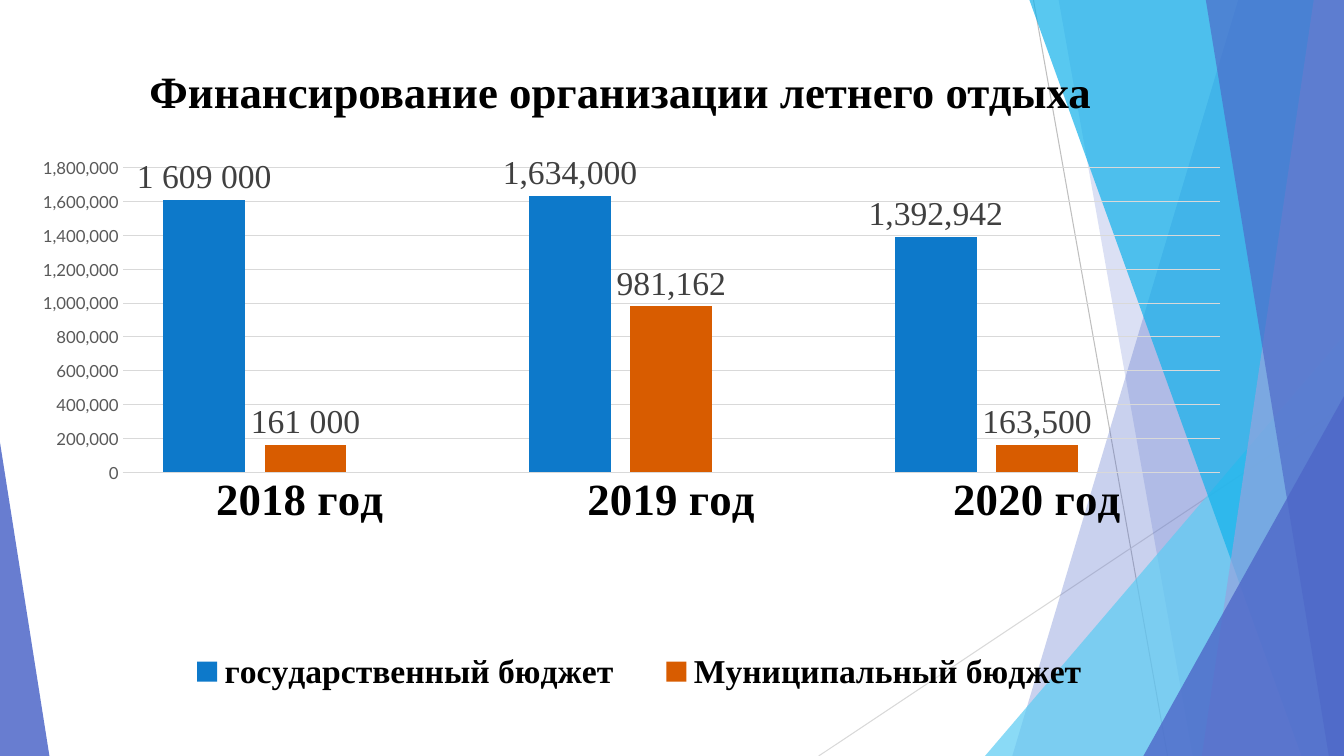
from dataclasses import dataclass
from typing import Optional

from lxml import etree
from pptx import Presentation
from pptx import util as u
from pptx.chart.data import CategoryChartData
from pptx.dml.color import RGBColor
from pptx.enum import chart as ch, shapes as sh, text as tx
from pptx.oxml import parse_xml
from pptx.oxml.ns import nsdecls, qn

HEX = {
    "black": "000000", "dark": "404040", "gray": "595959",
    "line": "BFBFBF", "grid": "D9D9D9",
    "indigo": "4E67C8", "aqua": "5ECCF3", "cyan": "12B2EB", "lilac": "95A4DE",
    "state": "0D79CA", "city": "D85C00",
}
SERIF, SANS = "Times New Roman", "Lato"
WIDE, HIGH = 13.33, 7.5


@dataclass
class Ray:
    start: tuple[float, float]
    end: tuple[float, float]
    hue: str


@dataclass
class Band:
    """A panel running to the right edge, given by its left corners."""
    top: float
    foot: float
    hue: str
    alpha: int
    right: float = WIDE


@dataclass
class Wedge:
    left: float
    top: float
    width: float
    apex: float
    hue: str
    alpha: int


@dataclass
class Budget:
    name: str
    sums: tuple[Optional[int], ...]
    hue: str = ""
    first: str = ""


RAYS = [
    Ray((10.25, 0), (11.58, HIGH), "line"),
    Ray((WIDE, 4.03), (8.12, HIGH), "grid"),
]
PANELS = [
    Band(12.28, 10.04, "indigo", 30),
    Band(10.5, 11.83, "indigo", 20),
    Wedge(9.77, 3.33, 3.56, 1, "aqua", 72),
    Band(10.21, 12.91, "cyan", 70),
    Band(13.03, 11.92, "lilac", 70),
    Band(11.96, 13.18, "indigo", 65),
    Wedge(11.34, 3.93, 1.99, 1, "indigo", 80),
    Wedge(0, 4.39, 0.49, 0, "indigo", 85),
]
YEARS = ["2018 год ", "2019 год", "2020 год"]
FUNDS = [
    Budget("государственный бюджет", (1609000, 1634000, 1392942), "state", "1 609 000"),
    Budget("Муниципальный бюджет", (161000, 981162, 163500), "city", "161 000"),
    Budget("Series 3", (None, None, None)),
]


def color(hue: str) -> RGBColor:
    return RGBColor.from_string(HEX[hue])


def style(font, size: int, hue: str, face: str = SERIF, bold: bool = False) -> None:
    font.size, font.name, font.bold = u.Pt(size), face, bold
    font.color.rgb = color(hue)


def stroke(line, hue: str, width: float) -> None:
    line.color.rgb = color(hue)
    line.width = u.Pt(width)


def draw_ray(slide, ray: Ray) -> None:
    ends = [u.Inches(n) for n in ray.start + ray.end]
    line = slide.shapes.add_connector(sh.MSO_CONNECTOR.STRAIGHT, *ends)
    stroke(line.line, ray.hue, 0.75)
    etree.SubElement(line.element.spPr, qn("a:effectLst"))


def draw_panel(slide, part: Band | Wedge) -> None:
    if isinstance(part, Band):
        spots = [(part.right, 0), (part.right, HIGH), (part.foot, HIGH)]
        pen = slide.shapes.build_freeform(u.Inches(part.top), 0)
        pen.add_line_segments([(u.Inches(x), u.Inches(y)) for x, y in spots])
        shape = pen.convert_to_shape()
    else:
        box = (part.left, part.top, part.width, HIGH - part.top)
        shape = slide.shapes.add_shape(
            sh.MSO_SHAPE.ISOSCELES_TRIANGLE, *map(u.Inches, box))
        shape.adjustments[0] = part.apex
    shape.shadow.inherit = False
    shape.line.fill.background()
    shape.fill.solid()
    shape.fill.fore_color.rgb = color(part.hue)
    tint = shape.element.spPr.find(".//" + qn("a:srgbClr"))
    etree.SubElement(tint, qn("a:alpha"), val=str(part.alpha * 1000))


def layout(x: float, y: float, w: float, h: float, inner: bool = False):
    """Manual chart layout in fractions of the chart area."""
    rows = '<c:layoutTarget val="inner"/>' if inner else ""
    rows += '<c:xMode val="edge"/><c:yMode val="edge"/>'
    rows += "".join(f'<c:{k} val="{v}"/>' for k, v in zip("xywh", (x, y, w, h)))
    return parse_xml(f'<c:layout {nsdecls("c")}><c:manualLayout>{rows}'
                     '</c:manualLayout></c:layout>')


def place_parts(chart) -> None:
    """Fix the plot and legend areas and drop the empty series from the legend."""
    plot = chart.element.find(".//" + qn("c:plotArea"))
    key = chart.element.find(".//" + qn("c:legend"))
    for area in (plot, key):
        for old in area.findall(qn("c:layout")):
            area.remove(old)
    plot.insert(0, layout(0.073, 0.017, 0.907, 0.537, True))
    entry = parse_xml(f'<c:legendEntry {nsdecls("c")}><c:idx val="2"/>'
                      '<c:delete val="1"/></c:legendEntry>')
    spot = key.find(qn("c:legendPos"))
    spot.addnext(entry)
    entry.addnext(layout(0.1, 0.84, 0.8, 0.13))


def format_fund(bars, fund: Budget) -> None:
    bars.format.fill.solid()
    bars.format.fill.fore_color.rgb = color(fund.hue)
    bars.invert_if_negative = False
    tags = bars.data_labels
    tags.show_value = True
    tags.number_format, tags.number_format_is_linked = "#,##0", False
    tags.position = ch.XL_LABEL_POSITION.OUTSIDE_END
    style(tags.font, 24, "dark")
    tag = bars.points[0].data_label
    tag.text_frame.text = fund.first
    style(tag.text_frame.paragraphs[0].font, 24, "dark")
    tag.position = ch.XL_LABEL_POSITION.OUTSIDE_END


def draw_chart(slide) -> None:
    data = CategoryChartData(number_format="#,##0")
    data.categories = YEARS
    for fund in FUNDS:
        data.add_series(fund.name, fund.sums)
    box = map(u.Inches, (0.34, 1.53, 12, 5.67))
    chart = slide.shapes.add_chart(ch.XL_CHART_TYPE.COLUMN_CLUSTERED, *box, data).chart
    chart.has_title = False
    style(chart.font, 10, "black", SANS)
    plot = chart.plots[0]
    plot.gap_width, plot.overlap, plot.vary_by_categories = 100, -24, False
    for bars, fund in zip(plot.series, FUNDS):
        if fund.hue:
            format_fund(bars, fund)

    years, sums = chart.category_axis, chart.value_axis
    for axis in (years, sums):
        axis.major_tick_mark = axis.minor_tick_mark = ch.XL_TICK_MARK.NONE
    style(years.tick_labels.font, 32, "black", bold=True)
    stroke(years.format.line, "grid", 1)
    style(sums.tick_labels.font, 12, "gray", SANS)
    sums.tick_labels.number_format = "#,##0"
    sums.tick_labels.number_format_is_linked = False
    sums.minimum_scale, sums.maximum_scale, sums.major_unit = 0, 1800000, 200000
    sums.format.line.fill.background()
    stroke(sums.major_gridlines.format.line, "grid", 0.75)

    chart.has_legend = True
    chart.legend.position = ch.XL_LEGEND_POSITION.BOTTOM
    chart.legend.include_in_layout = False
    style(chart.legend.font, 24, "black", bold=True)
    place_parts(chart)


def set_title(slide, words: str) -> None:
    title = slide.shapes.title
    title.left, title.top, title.width, title.height = map(
        u.Inches, (0.52, 0.58, 11.27, 0.64))
    frame = title.text_frame
    frame.text = words
    frame.word_wrap, frame.auto_size = True, tx.MSO_AUTO_SIZE.NONE
    frame.vertical_anchor = tx.MSO_ANCHOR.MIDDLE
    line = frame.paragraphs[0]
    line.alignment = tx.PP_ALIGN.CENTER
    style(line.font, 32, "black", bold=True)
    title.element.getparent().append(title.element)


def main() -> None:
    deck = Presentation()
    deck.slide_width, deck.slide_height = u.Inches(WIDE), u.Inches(HIGH)
    slide = deck.slides.add_slide(deck.slide_layouts[5])
    for ray in RAYS:
        draw_ray(slide, ray)
    for part in PANELS:
        draw_panel(slide, part)
    draw_chart(slide)
    set_title(slide, "Финансирование организации летнего отдыха")
    deck.save("out.pptx")


if __name__ == "__main__":
    main()
